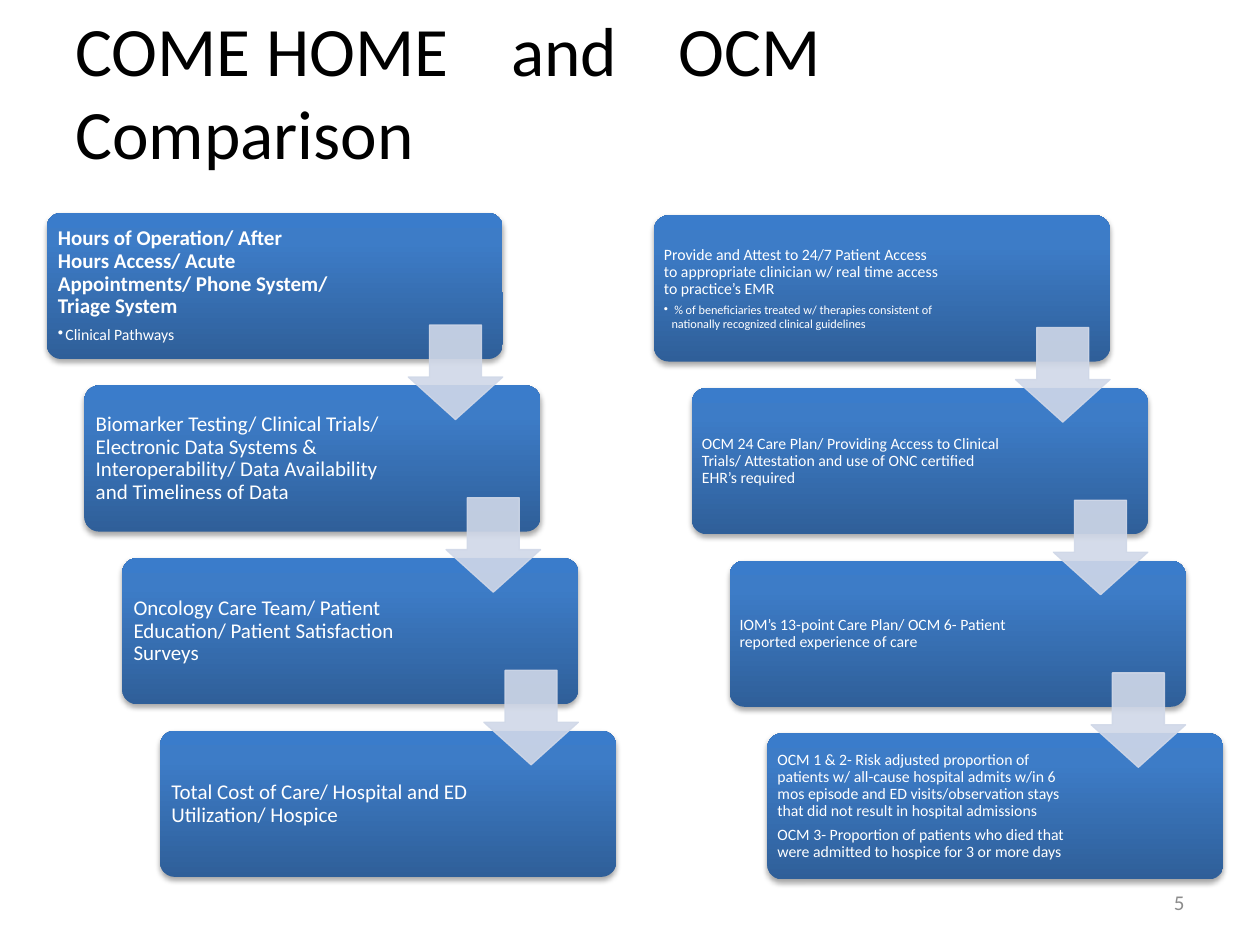
from pptx import Presentation
from pptx.dml.color import RGBColor
from pptx.enum.shapes import MSO_SHAPE as SHAPE
from pptx.enum.text import MSO_ANCHOR as ANCHOR, PP_ALIGN as ALIGN
from pptx.oxml import parse_xml
from pptx.oxml.ns import nsdecls
from pptx.util import Inches, Pt
from lxml import etree

BLACK = RGBColor(0x00, 0x00, 0x00)
WHITE = RGBColor(0xFF, 0xFF, 0xFF)
GRAY = RGBColor(0x8C, 0x8C, 0x8C)
PALE = RGBColor(0xD0, 0xD8, 0xE8)
DARK = RGBColor(0x2F, 0x5F, 0x99)
MID = RGBColor(0x3D, 0x7C, 0xC7)
BRIGHT = RGBColor(0x3A, 0x7C, 0xCB)

# Staircase grid, in inches
BOX_W, BOX_H = 3.62, 1.16
STEP_X, STEP_Y = 0.3, 1.37
ARROW = 0.75
PAD = 0.04

GRADIENT = (
    f'<a:gradFill {nsdecls("a")} rotWithShape="1"><a:gsLst>'
    + "".join(f'<a:gs pos="{pos}"><a:srgbClr val="{c}"/></a:gs>'
              for pos, c in ((0, DARK), (80000, MID), (100000, BRIGHT)))
    + '</a:gsLst><a:lin ang="16200000" scaled="0"/></a:gradFill>')
SHADOW = (
    f'<a:effectLst {nsdecls("a")}><a:outerShdw blurRad="40000" dist="23000" '
    'dir="5400000" rotWithShape="0"><a:srgbClr val="000000">'
    '<a:alpha val="35000"/></a:srgbClr></a:outerShdw></a:effectLst>')


def add_text(shapes, text, x, y, w, h, size, color=WHITE, bold=False,
             align=ALIGN.LEFT, inset=None, line=None, bullet=None,
             bullet_size=None, tabs=()):
    """Add a text box; bullet is an optional indented last paragraph."""
    sp = shapes.add_textbox(Inches(x), Inches(y), Inches(w), Inches(h))
    tf = sp.text_frame
    tf.word_wrap = True
    tf.vertical_anchor = ANCHOR.MIDDLE
    if inset is not None:
        tf.margin_left = tf.margin_right = Inches(inset)
        tf.margin_top = tf.margin_bottom = Inches(inset)
    tf.text = text
    if bullet:
        tf.add_paragraph().text = bullet
    for i, p in enumerate(tf.paragraphs):
        is_bullet = bool(bullet) and i > 0
        pt = bullet_size if is_bullet else size
        p.alignment = align
        if line:
            p.line_spacing = line
            p.space_after = Pt(round(pt * (0.18 if is_bullet else 0.42), 1))
        pPr = p._p.get_or_add_pPr()
        if is_bullet:
            p.level = 1
            pPr.set("marL", str(Inches(0.06)))
            pPr.set("indent", str(-Inches(0.06)))
            pPr.append(parse_xml(f'<a:buChar {nsdecls("a")} char="•"/>'))
        if tabs:
            stops = "".join(f'<a:tab pos="{Inches(t)}" algn="l"/>' for t in tabs)
            pPr.append(parse_xml(f'<a:tabLst {nsdecls("a")}>{stops}</a:tabLst>'))
        for r in p.runs:
            r.font.name = "Calibri"
            r.font.size = Pt(pt)
            r.font.bold = bold and not is_bullet
            r.font.color.rgb = color


prs = Presentation()
prs.slide_width, prs.slide_height = Inches(10), Inches(7.5)
s = prs.slides.add_slide(prs.slide_layouts[6])

# Title and slide number
add_text(s.shapes, "COME HOME\tand\tOCM\vComparison", 0.5, 0.1, 9, 1.23, 39.6,
         color=BLACK, tabs=(3.46, 4.79))
add_text(s.shapes, "5", 7.17, 6.97, 2.33, 0.38, 12, color=GRAY, align=ALIGN.RIGHT)

# One staircase per programme: left, top, text size, inset, steps
come_home = [
    dict(text="Hours of Operation/ After Hours Access/ Acute Appointments/ "
              "Phone System/ Triage System",
         bold=True, bullet="Clinical Pathways", bullet_size=9),
    dict(text="Biomarker Testing/ Clinical Trials/ Electronic Data Systems & "
              "Interoperability/ Data Availability and Timeliness of Data"),
    dict(text="Oncology Care Team/ Patient Education/ Patient Satisfaction Surveys"),
    dict(text="Total Cost of Care/ Hospital and ED Utilization/ Hospice"),
]
ocm = [
    dict(text="Provide and Attest to 24/7 Patient Access to appropriate clinician "
              "w/ real time access to practice’s EMR",
         bullet=" % of beneficiaries treated w/ therapies consistent of "
                "nationally recognized clinical guidelines", bullet_size=7),
    dict(text="OCM 24 Care Plan/ Providing Access to Clinical Trials/ "
              "Attestation and use of ONC certified EHR’s required"),
    dict(text="IOM’s 13-point Care Plan/ OCM 6- Patient reported experience of care"),
    dict(text="OCM 1 & 2- Risk adjusted proportion of patients w/ all-cause hospital "
              "admits w/in 6 mos episode and ED visits/observation stays that did "
              "not result in hospital admissions\n"
              "OCM 3- Proportion of patients who died that were admitted to hospice "
              "for 3 or more days"),
]

for left, top, size, inset, steps in ((0.37, 1.69, 12, 0.05, come_home),
                                      (5.19, 1.71, 9, 0.04, ocm)):
    shapes = s.shapes.add_group_shape().shapes

    # Boxes with their text
    for i, step in enumerate(steps):
        x, y = left + i * STEP_X, top + i * STEP_Y
        sp = shapes.add_shape(SHAPE.ROUNDED_RECTANGLE, Inches(x), Inches(y),
                              Inches(BOX_W), Inches(BOX_H))
        sp.adjustments[0] = 0.1
        sp.line.fill.background()
        spPr = sp._element.spPr
        spPr.insert(2, parse_xml(GRADIENT))
        spPr.append(parse_xml(SHADOW))
        add_text(shapes, x=x + PAD, y=y + PAD, w=2.27 if i == 0 else 2.49,
                 h=BOX_H - 2 * PAD, size=size, inset=inset, line=0.9, **step)

    # Arrows at the right edge, each leading to the next box
    for i in range(len(steps) - 1):
        sp = shapes.add_shape(SHAPE.DOWN_ARROW,
                              Inches(left + BOX_W - ARROW + i * STEP_X),
                              Inches(top + 0.89 + i * STEP_Y),
                              Inches(ARROW), Inches(ARROW))
        sp.adjustments[0], sp.adjustments[1] = 0.55, 0.45
        sp.shadow.inherit = False
        sp.fill.solid()
        sp.fill.fore_color.rgb = PALE
        sp.line.color.rgb = PALE
        sp.line.width = Pt(0.75)
        for clr in sp._element.spPr.iter("{*}srgbClr"):
            etree.SubElement(clr, clr.tag.replace("srgbClr", "alpha"), val="90000")

prs.save("out.pptx")
